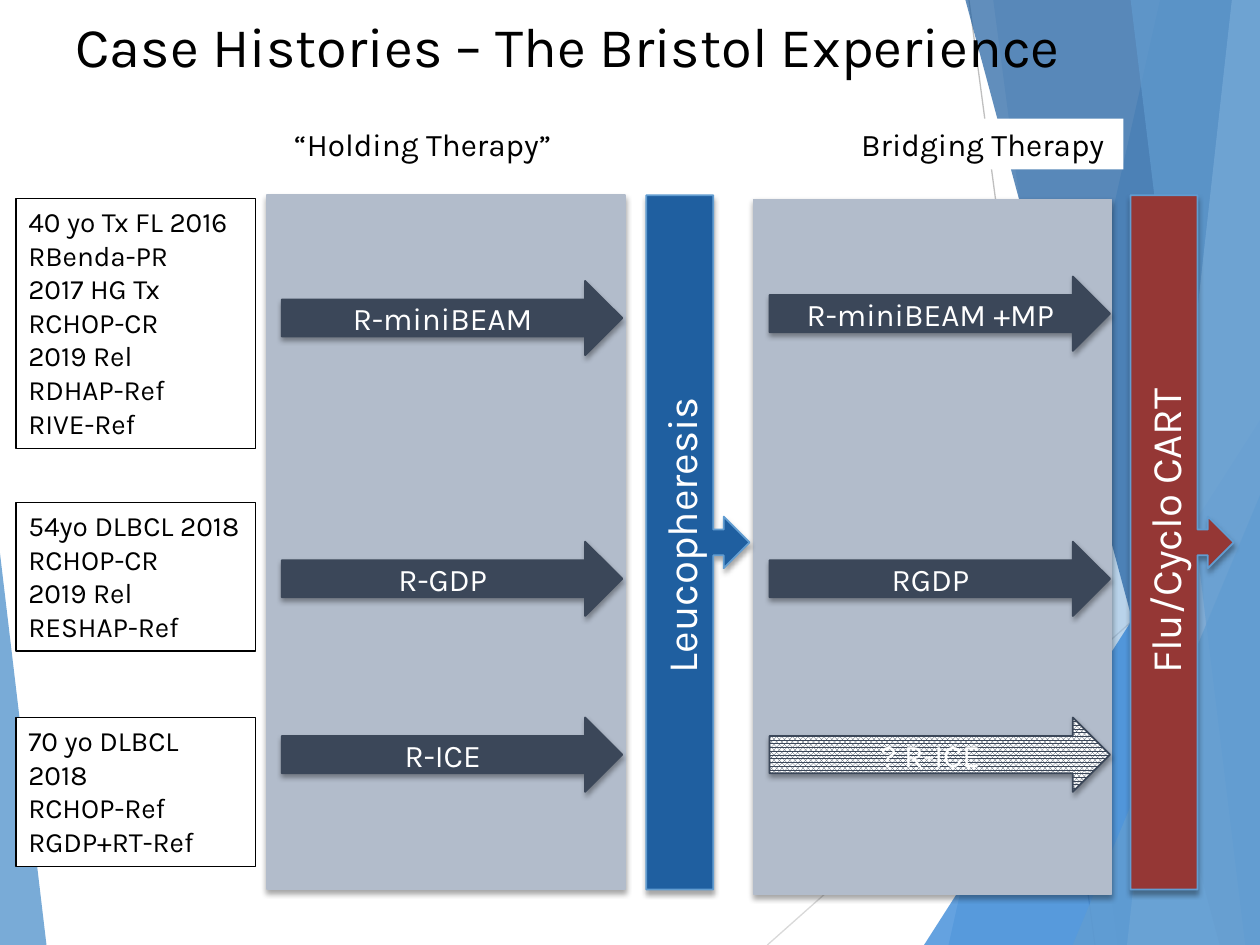
from lxml import etree
from pptx import Presentation
from pptx.dml.color import RGBColor
from pptx.enum import dml, shapes, text
from pptx.oxml.ns import qn
from pptx.util import Pt

BLACK = RGBColor(0x00, 0x00, 0x00)
WHITE = RGBColor(0xFF, 0xFF, 0xFF)
PANEL = RGBColor(0xB2, 0xBC, 0xCB)
SLATE = RGBColor(0x3B, 0x47, 0x59)
NAVY = RGBColor(0x1F, 0x5F, 0xA0)
AZURE = RGBColor(0x29, 0x7F, 0xD5)
SKY = RGBColor(0x62, 0x9D, 0xD1)
PALE = RGBColor(0xA1, 0xC4, 0xE3)
BRICK = RGBColor(0x95, 0x37, 0x35)
LIGHT_GREY = RGBColor(0xD9, 0xD9, 0xD9)
GREY = RGBColor(0xBF, 0xBF, 0xBF)

WIDTH, HEIGHT = 720, 540
Kind = shapes.MSO_SHAPE


class Board:
    font = "Karla"

    def __init__(self, slide):
        self.slide = slide
        self.shapes = slide.shapes

    def set_words(self, shape, words, size, color, align=text.PP_ALIGN.LEFT,
                  anchor=text.MSO_ANCHOR.TOP):
        frame = shape.text_frame
        frame.text = words
        frame.word_wrap = True
        frame.vertical_anchor = anchor
        for paragraph in frame.paragraphs:
            paragraph.alignment = align
            for run in paragraph.runs:
                run.font.name = self.font
                run.font.size = Pt(size)
                run.font.bold = False
                run.font.color.rgb = color

    def paint(self, shape, fill=None, line=None, weight=1, alpha=None):
        shape.shadow.inherit = False
        if fill is None:
            shape.fill.background()
        else:
            shape.fill.solid()
            shape.fill.fore_color.rgb = fill
        if alpha is not None:
            color = shape._element.spPr.find(".//" + qn("a:srgbClr"))
            etree.SubElement(color, qn("a:alpha"), val=str(alpha * 1000))
        if line is None:
            shape.line.fill.background()
        else:
            shape.line.color.rgb = line
            shape.line.width = Pt(weight)

    def shape(self, kind, box, **style):
        item = self.shapes.add_shape(kind, *map(Pt, box))
        self.paint(item, **style)
        return item

    def raised(self, kind, box, **style):
        """Add a shape with a soft shadow below it."""
        item = self.shape(kind, box, **style)
        effects = item._element.spPr.find(qn("a:effectLst"))
        shadow = etree.SubElement(
            effects, qn("a:outerShdw"), blurRad=str(Pt(3)), dist=str(Pt(2)),
            dir="5400000", rotWithShape="0")
        color = etree.SubElement(shadow, qn("a:srgbClr"), val="000000")
        etree.SubElement(color, qn("a:alpha"), val="35000")
        return item

    def hairline(self, start, end, color):
        line = self.shapes.add_connector(
            shapes.MSO_CONNECTOR.STRAIGHT, *map(Pt, start + end))
        line.line.color.rgb = color
        line.line.width = Pt(0.75)
        etree.SubElement(line._element.spPr, qn("a:effectLst"))

    def band(self, top_x, bottom_x, color, alpha):
        """Fill the area from a slanted edge to the right side of the slide."""
        top = Pt(-0.7)
        builder = self.shapes.build_freeform(Pt(top_x), top)
        builder.add_line_segments([(Pt(WIDTH), top), (Pt(WIDTH), Pt(HEIGHT)),
                                   (Pt(bottom_x), Pt(HEIGHT))])
        self.paint(builder.convert_to_shape(), fill=color, alpha=alpha)

    def wedge(self, box, apex, color, alpha):
        triangle = self.shape(Kind.ISOSCELES_TRIANGLE, box, fill=color, alpha=alpha)
        triangle.adjustments[0] = apex

    def history(self, top, height, words, fill=None):
        box = self.shape(Kind.RECTANGLE, (9.1, top, 137, height), fill=fill,
                         line=BLACK, weight=0.75)
        self.set_words(box, words, 16, BLACK)

    def therapy(self, left, top, words):
        arrow = self.raised(Kind.RIGHT_ARROW, (left, top, 194.6, 42.5),
                            fill=SLATE, line=SLATE)
        self.set_words(arrow, words, 18, WHITE, text.PP_ALIGN.CENTER,
                       text.MSO_ANCHOR.MIDDLE)
        return arrow

    def stage(self, left, color):
        self.raised(Kind.RIGHT_ARROW_CALLOUT, (left, 111.6, 59, 396.7),
                    fill=color, line=SKY)

    def upright(self, box, words):
        label = self.shapes.add_textbox(*map(Pt, box))
        label.rotation = 270
        self.set_words(label, words, 24, WHITE)

    def headings(self, box, words, stop):
        bar = self.shape(Kind.RECTANGLE, box, fill=WHITE)
        self.set_words(bar, words, 18, BLACK)
        properties = bar.text_frame.paragraphs[0]._p.get_or_add_pPr()
        tabs = etree.SubElement(properties, qn("a:tabLst"))
        etree.SubElement(tabs, qn("a:tab"), pos=str(Pt(stop)), algn="l")

    def title(self, box, words):
        """Fill the title placeholder and bring it to the front."""
        heading = self.shapes.title
        heading.left, heading.top, heading.width, heading.height = map(Pt, box)
        self.set_words(heading, words, 32, BLACK)
        self.shapes._spTree.append(heading._element)


def draw_backdrop(board):
    board.hairline((553.7, 0), (625.7, HEIGHT), GREY)
    board.hairline((WIDTH, 290), (438.5, HEIGHT), LIGHT_GREY)
    board.band(663, 542, SKY, 30)
    board.band(567.5, 638.5, SKY, 20)
    board.wedge((528, 240, 192, 300), 1, AZURE, 72)
    board.band(551.5, 697, NAVY, 70)
    board.band(704, 644, PALE, 70)
    board.band(646, 711.5, SKY, 65)
    board.wedge((613, 283, 107, 257), 1, SKY, 80)
    board.wedge((0, 316, 26.6, 224), 0, SKY, 85)


def main():
    deck = Presentation()
    deck.slide_width, deck.slide_height = Pt(WIDTH), Pt(HEIGHT)
    board = Board(deck.slides.add_slide(deck.slide_layouts[5]))
    draw_backdrop(board)

    for left, top in ((152.6, 111.4), (430.5, 114)):
        board.raised(Kind.RECTANGLE, (left, top, 204.7, 396.7), fill=PANEL, line=PANEL)

    board.history(113.4, 143, "40 yo Tx FL 2016\nRBenda-PR\n2017 HG Tx\nRCHOP-CR\n"
                              "2019 Rel\nRDHAP-Ref\nRIVE-Ref")
    board.history(287, 85, "54yo DLBCL 2018\nRCHOP-CR\n2019 Rel\nRESHAP-Ref")
    board.history(410, 85, "70 yo DLBCL 2018\nRCHOP-Ref\nRGDP+RT-Ref", fill=WHITE)

    board.stage(369.3, NAVY)
    board.stage(646, BRICK)
    board.upright((297.4, 282, 183, 36.3), "Leucopheresis")
    board.upright((548.6, 257, 234, 36.3), "Flu/Cyclo CART")

    holding, bridging = 161, 439.7
    board.therapy(holding, 160.5, "R-miniBEAM")
    board.therapy(bridging, 158, "R-miniBEAM +MP")
    for top, before, after in ((309.5, "R-GDP", "RGDP"), (410, "R-ICE", "? R-ICE")):
        board.therapy(holding, top, before)
        planned = board.therapy(bridging, top, after)
    planned.fill.patterned()
    planned.fill.pattern = dml.MSO_PATTERN.PERCENT_80
    planned.fill.fore_color.rgb = SLATE
    planned.fill.back_color.rgb = WHITE

    board.headings((161, 67.8, 481, 29), "“Holding Therapy”\tBridging Therapy", 324)
    board.title((36, 3, 648, 64), "Case Histories – The Bristol Experience")
    deck.save("out.pptx")


if __name__ == "__main__":
    main()
